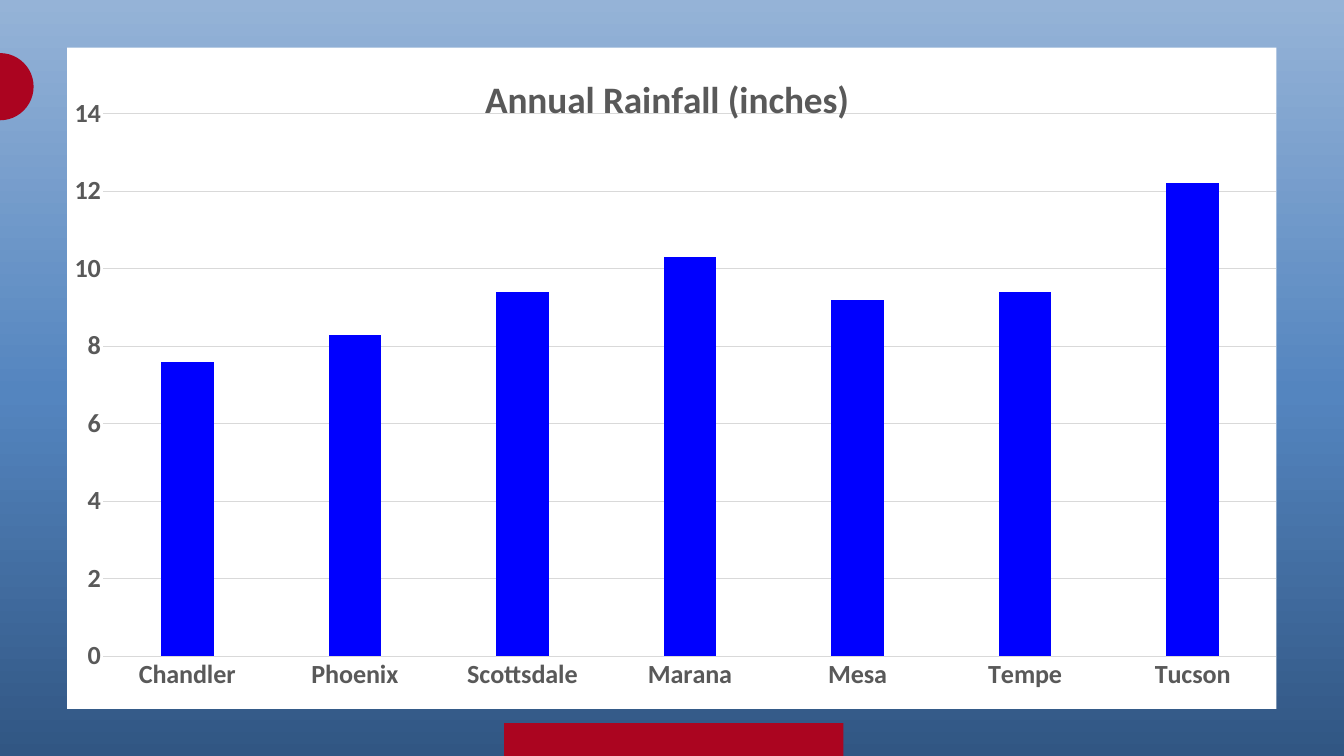
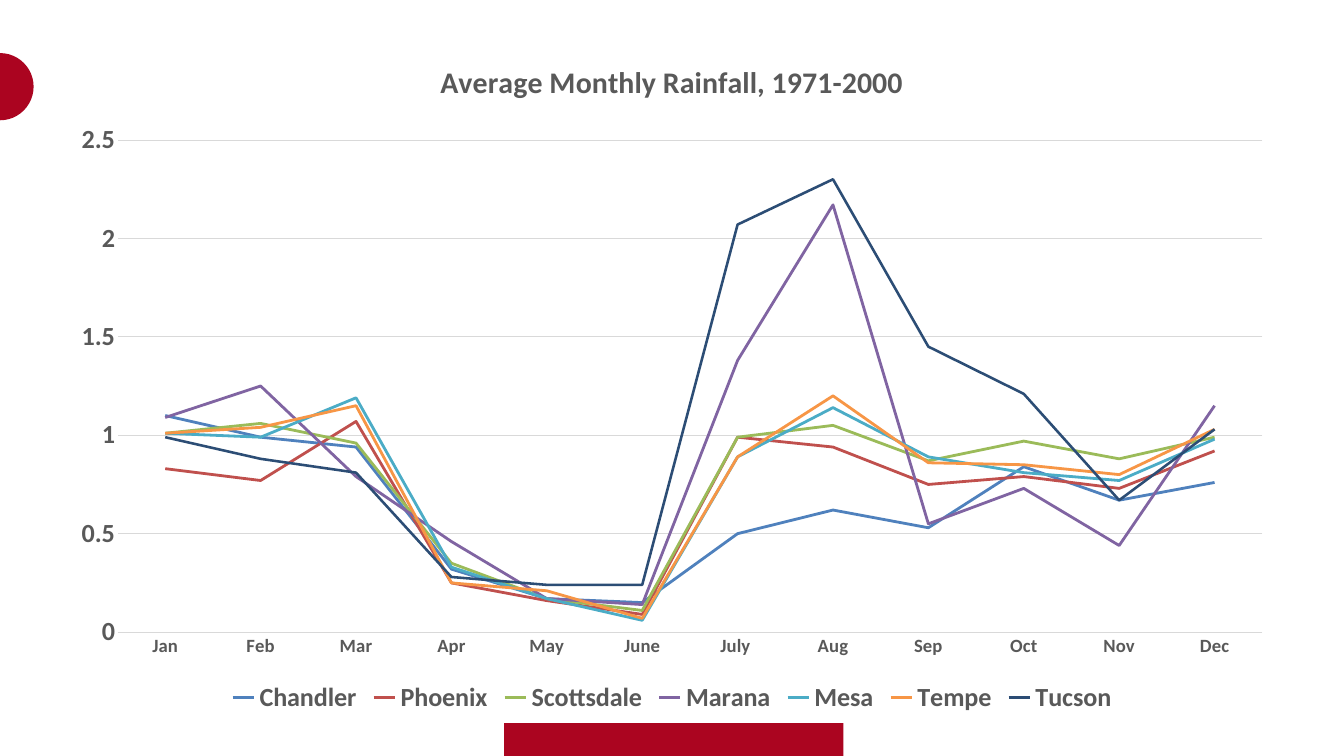
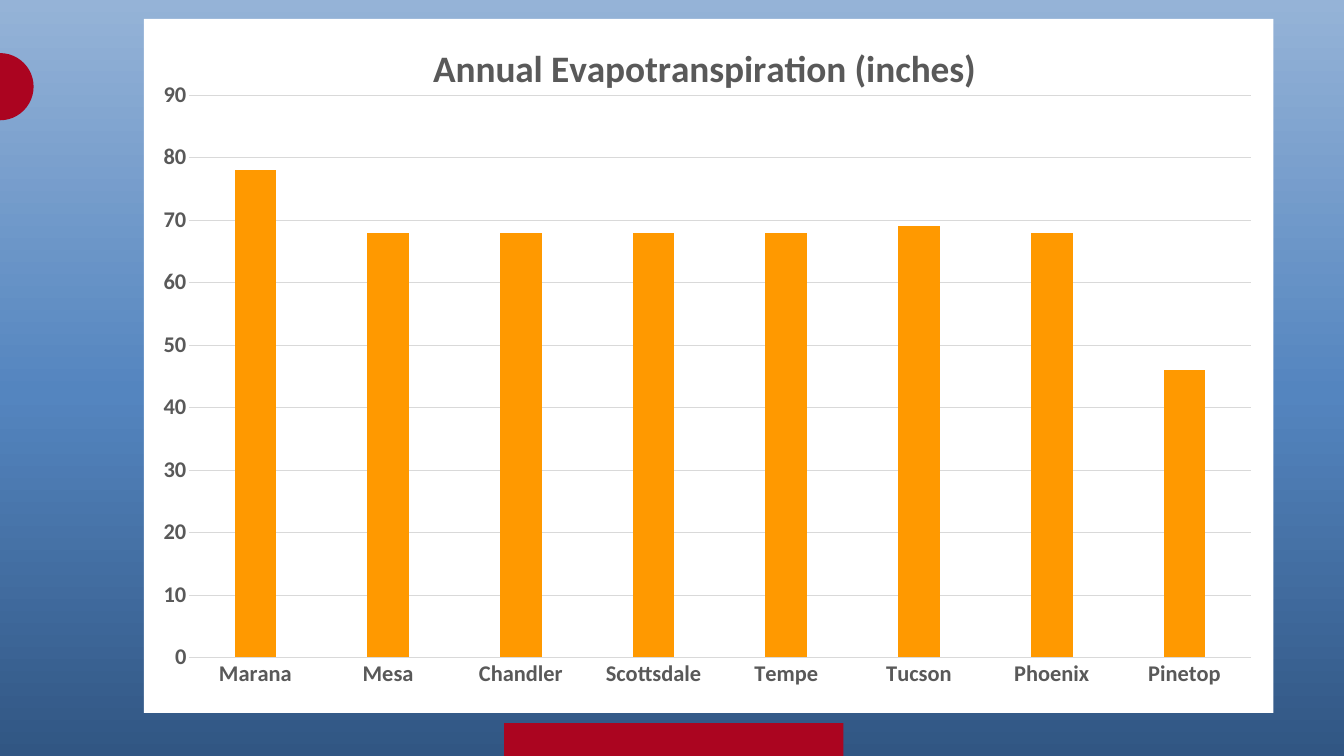
"""Build three rainfall and evapotranspiration chart slides."""
from copy import deepcopy

from pptx import Presentation
from pptx import util as u
from pptx.chart.data import CategoryChartData
from pptx.dml.color import RGBColor
from pptx.enum import chart as ch
from pptx.enum import shapes
from pptx.oxml import parse_xml
from pptx.oxml.ns import nsdecls, qn

CELL = u.Inches(1)
COLUMNS, ROWS = 20, 11.25
FONT = "Calibri"

BAND_RED = RGBColor(0xAB, 0x05, 0x20)
DOT_RED = RGBColor(0xAB, 0x04, 0x20)
WHITE = RGBColor(0xFF, 0xFF, 0xFF)
BLACK = RGBColor(0x00, 0x00, 0x00)
TEXT_GREY = RGBColor(0x59, 0x59, 0x59)
RULE_GREY = RGBColor(0xD9, 0xD9, 0xD9)
RAIN_BLUE = RGBColor(0x00, 0x00, 0xFF)
EVAPORATION_ORANGE = RGBColor(0xFF, 0x99, 0x00)
SKY = [
    (0, RGBColor(0x31, 0x56, 0x83)),
    (0.48, RGBColor(0x54, 0x85, 0xBF)),
    (1, RGBColor(0x95, 0xB3, 0xD7)),
]

MONTHS = ["Jan", "Feb", "Mar", "Apr", "May", "June",
          "July ", "Aug", "Sep", "Oct", "Nov", "Dec"]
MONTHLY_RAIN = {
    "Chandler": [1.1, 0.99, 0.94, 0.32, 0.17, 0.15, 0.5, 0.62, 0.53, 0.84, 0.67, 0.76],
    "Phoenix": [0.83, 0.77, 1.07, 0.25, 0.16, 0.09, 0.99, 0.94, 0.75, 0.79, 0.73, 0.92],
    "Scottsdale": [1.01, 1.06, 0.96, 0.35, 0.17, 0.11, 0.99, 1.05, 0.87, 0.97, 0.88, 0.99],
    "Marana": [1.09, 1.25, 0.79, 0.46, 0.17, 0.14, 1.38, 2.17, 0.55, 0.73, 0.44, 1.15],
    "Mesa": [1.01, 0.99, 1.19, 0.33, 0.17, 0.06, 0.89, 1.14, 0.89, 0.81, 0.77, 0.98],
    "Tempe": [1.01, 1.04, 1.15, 0.25, 0.21, 0.07, 0.89, 1.2, 0.86, 0.85, 0.8, 1.03],
    "Tucson": [0.99, 0.88, 0.81, 0.28, 0.24, 0.24, 2.07, 2.3, 1.45, 1.21, 0.67, 1.03],
}
CITY_LINES = {
    "Chandler": (RGBColor(0x4F, 0x81, 0xBD), 3),
    "Phoenix": (RGBColor(0xC0, 0x50, 0x4D), 3),
    "Scottsdale": (RGBColor(0x9B, 0xBB, 0x59), 3),
    "Marana": (RGBColor(0x80, 0x64, 0xA2), 3),
    "Mesa": (RGBColor(0x4B, 0xAC, 0xC6), 3),
    "Tempe": (RGBColor(0xF7, 0x96, 0x46), 3),
    "Tucson": (RGBColor(0x2C, 0x4D, 0x75), 2.75),
}
ANNUAL_RAIN = {"Chandler": 7.6, "Phoenix": 8.3, "Scottsdale": 9.4, "Marana": 10.3,
               "Mesa": 9.2, "Tempe": 9.4, "Tucson": 12.2}
EVAPOTRANSPIRATION = {"Marana": 78, "Mesa": 68, "Chandler": 68, "Scottsdale": 68,
                      "Tempe": 68, "Tucson": 69, "Phoenix": 68, "Pinetop": 46}


def grid(*cells):
    """Turn grid columns and rows into slide lengths."""
    return [int(CELL * cell) for cell in cells]


def style_font(font, size, color=TEXT_GREY, bold=True):
    """Apply the deck's font at the given size."""
    for name, value in {"name": FONT, "size": u.Pt(size), "bold": bold}.items():
        setattr(font, name, value)
    font.color.rgb = color


def style_line(line, color, width):
    """Give a line its colour and its width in points."""
    line.color.rgb = color
    line.width = u.Pt(width)


def paint_sky(page):
    """Fill the background with the vertical blue gradient."""
    fill = page.background.fill
    fill.gradient()
    fill.gradient_angle = 90
    stops = page.element.find(".//" + qn("a:gsLst"))
    stops.append(deepcopy(stops[0]))
    for stop, (position, color) in zip(fill.gradient_stops, SKY):
        stop.position = position
        stop.color.rgb = color


def add_page(deck, sky):
    """Add a page with its background, bottom band and edge dot."""
    page = deck.slides.add_slide(deck.slide_layouts[6])
    if sky:
        paint_sky(page)
    else:
        page.background.fill.solid()
        page.background.fill.fore_color.rgb = WHITE
    kinds = shapes.MSO_SHAPE
    for kind, box, color in [
        (kinds.RECTANGLE, (7.5, 10.76, 5.05, 0.54), BAND_RED),
        (kinds.OVAL, (-0.5, 0.79, 1, 1), DOT_RED),
    ]:
        shape = page.shapes.add_shape(kind, *grid(*box))
        shape.shadow.inherit = False
        shape.fill.solid()
        shape.fill.fore_color.rgb = color
        shape.line.fill.background()
    return page


def set_layout(parent, index, target="", **shares):
    """Place a chart part by shares of the chart's size."""
    old = parent.find(qn("c:layout"))
    if old is not None:
        parent.remove(old)
    inner = f'<c:layoutTarget val="{target}"/>' if target else ""
    modes = "".join(f'<c:{name}Mode val="edge"/>' for name in "xy")
    values = "".join(f'<c:{name} val="{share}"/>' for name, share in shares.items())
    parent.insert(index, parse_xml(
        f'<c:layout {nsdecls("c")}><c:manualLayout>{inner}{modes}{values}'
        "</c:manualLayout></c:layout>"))


def add_chart(page, kind, box, data, title, title_size, label_sizes, top, step):
    """Add a white chart with a grey title, axes and gridlines."""
    chart = page.shapes.add_chart(kind, *grid(*box), data).chart
    style_font(chart.font, 10, BLACK, False)
    chart.element.find(qn("c:chart")).addnext(parse_xml(
        f'<c:spPr {nsdecls("c", "a")}><a:solidFill><a:srgbClr val="{WHITE}"/>'
        "</a:solidFill><a:ln><a:noFill/></a:ln></c:spPr>"))
    chart.has_legend = False
    chart.has_title = True
    frame = chart.chart_title.text_frame
    frame.text = title
    style_font(frame.paragraphs[0].runs[0].font, title_size)
    for axis, size in zip((chart.category_axis, chart.value_axis), label_sizes):
        axis.major_tick_mark = axis.minor_tick_mark = ch.XL_TICK_MARK.NONE
        style_font(axis.tick_labels.font, size)
    style_line(chart.category_axis.format.line, RULE_GREY, 0.75)
    scale = chart.value_axis
    for name, value in {"minimum_scale": 0, "maximum_scale": top, "major_unit": step,
                        "has_major_gridlines": True}.items():
        setattr(scale, name, value)
    scale.format.line.fill.background()
    style_line(scale.major_gridlines.format.line, RULE_GREY, 0.75)
    chart.plots[0].vary_by_categories = False
    return chart


def add_column_page(deck, box, values, title, label_size, top, step, color, plot_box):
    """Add a page with one column chart of yearly values."""
    page = add_page(deck, sky=True)
    data = CategoryChartData()
    data.categories = list(values)
    data.add_series("Series 1", list(values.values()))
    chart = add_chart(page, ch.XL_CHART_TYPE.COLUMN_CLUSTERED, box, data, title, 40,
                      (label_size, label_size), top, step)
    plot = chart.plots[0]
    plot.gap_width, plot.overlap = 219, -27
    fill = plot.series[0].format.fill
    fill.solid()
    fill.fore_color.rgb = color
    set_layout(chart.element.find(".//" + qn("c:plotArea")), 0, "inner",
               **dict(zip("xywh", plot_box)))
    return chart


def add_monthly_page(deck, box):
    """Add a page with one rainfall line per city."""
    page = add_page(deck, sky=False)
    data = CategoryChartData()
    data.categories = MONTHS
    for city, rain in MONTHLY_RAIN.items():
        data.add_series(city, rain)
    chart = add_chart(page, ch.XL_CHART_TYPE.LINE, box, data,
                      "Average Monthly Rainfall, 1971-2000", 32, (20, 28), 2.5, 0.5)
    chart.has_legend = True
    chart.legend.position = ch.XL_LEGEND_POSITION.BOTTOM
    chart.legend.include_in_layout = False
    style_font(chart.legend.font, 28)
    for series in chart.plots[0].series:
        series.smooth = False
        style_line(series.format.line, *CITY_LINES[series.name])


def main():
    """Build and save the deck."""
    deck = Presentation()
    deck.slide_width, deck.slide_height = grid(COLUMNS, ROWS)
    rain = add_column_page(deck, (1, 0.71, 18, 9.84), ANNUAL_RAIN,
                           "Annual Rainfall (inches) ", 28, 14, 2, RAIN_BLUE,
                           (0.03, 0.1, 0.97, 0.82))
    set_layout(rain.chart_title.element if hasattr(rain.chart_title, "element")
               else rain.element.find(".//" + qn("c:title")), 1, x=0.34, y=0.03)
    add_monthly_page(deck, (0.85, 0.57, 18.3, 10.12))
    add_column_page(deck, (2.14, 0.28, 16.81, 10.33), EVAPOTRANSPIRATION,
                    "Annual Evapotranspiration (inches) ", 24, 90, 10,
                    EVAPORATION_ORANGE, (0.04, 0.11, 0.94, 0.81))
    deck.save("out.pptx")


if __name__ == "__main__":
    main()
